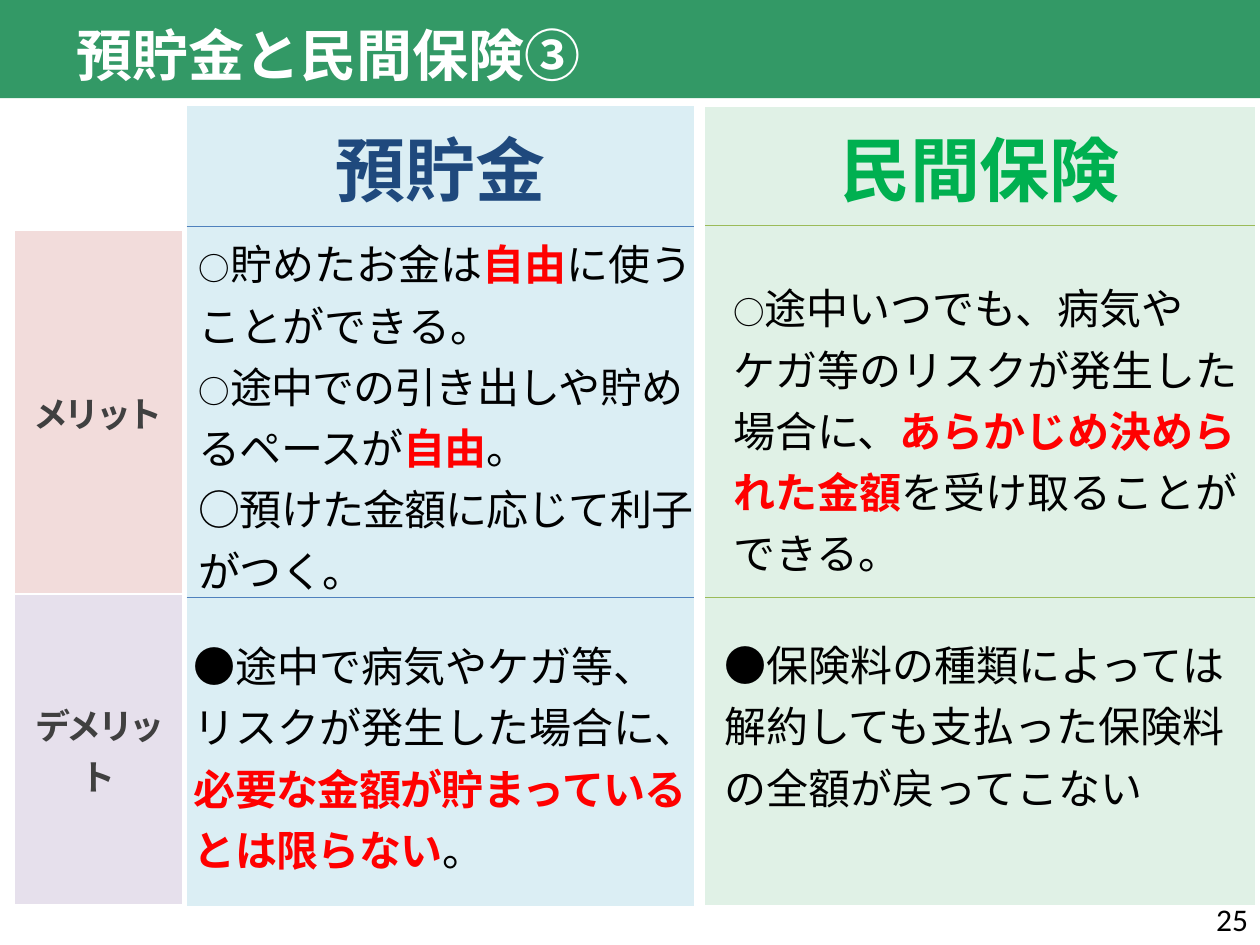
from lxml import etree
from pptx import Presentation
from pptx.dml.color import RGBColor
from pptx.enum.shapes import MSO_SHAPE
from pptx.enum.text import MSO_ANCHOR, PP_ALIGN
from pptx.oxml.ns import qn
from pptx.util import Cm, Pt

RECT = MSO_SHAPE.RECTANGLE
TOP, MIDDLE = MSO_ANCHOR.TOP, MSO_ANCHOR.MIDDLE
LEFT, CENTER, RIGHT = PP_ALIGN.LEFT, PP_ALIGN.CENTER, PP_ALIGN.RIGHT
JP_FONT = "Noto Sans CJK JP"
PLAIN_TABLE_STYLE = "{2D5ABB26-0587-4C30-8999-92F81FD0307C}"

COLORS = {
    "header": "339966", "white": "FFFFFF", "black": "000000", "red": "FF0000",
    "deposit_fill": "DBEEF4", "deposit_line": "4F81BD", "deposit_title": "1F497D",
    "insurance_fill": "E0F1E6", "insurance_line": "9BBB59", "insurance_title": "00B050",
    "merit_fill": "F2DCDB", "demerit_fill": "E6E0EC", "label": "404040",
}

# Run formats
BODY = {"size": 24, "color": "black"}
MARK = {**BODY, "size": 18}
KEY = {**BODY, "color": "red", "bold": True}
TIGHT, TIGHT_KEY = {**BODY, "spacing": -50}, {**KEY, "spacing": -50}
CLOSE, CLOSE_KEY = {**BODY, "spacing": -40}, {**KEY, "spacing": -40}

DEPOSIT = {
    "name": "deposit", "title": "預貯金", "rows": (2.44, 7.47, 6.22),
    "notes": [
        ((0, 2.34, 10.59, 7.62), [
            [("○", MARK), ("貯めたお金は", BODY), ("自由", KEY), ("に使うことができる。", BODY)],
            [("○", MARK), ("途中での引き出しや貯めるペースが", TIGHT), ("自由", TIGHT_KEY),
             ("。", TIGHT)],
            [("○預けた金額に応じて利子がつく。", TIGHT)],
        ]),
        ((-0.1, 10.44, 10.59, 5.13), [
            [("●途中で病気やケガ等、リスクが発生した場合に、", BODY),
             ("必要な金額が貯まっているとは限らない", CLOSE_KEY), ("。", CLOSE)],
        ]),
    ],
}
INSURANCE = {
    "name": "insurance", "title": "民間保険", "rows": (2.39, 7.49, 6.2),
    "notes": [
        ((0.31, 3.2, 11.1, 5.11), [
            [("○", MARK), ("途中いつでも、病気や　ケガ等のリスクが発生した場合に、", BODY),
             ("あらかじめ決められた金額", KEY), ("を受け取ることができる。", BODY)],
        ]),
        ((0.13, 10.39, 11.1, 3.86), [
            [("●保険料の種類によっては解約しても支払った保険料の全額が戻ってこない", BODY)],
        ]),
    ],
}


def rgb(name):
    return RGBColor.from_string(COLORS[name])


def write_runs(paragraph, runs, align):
    paragraph.alignment = align
    for text, style in runs:
        run = paragraph.add_run()
        run.text = text
        font_name = style.get("font", JP_FONT)
        values = {"size": Pt(style["size"]), "bold": style.get("bold", False), "name": font_name}
        for attribute, value in values.items():
            setattr(run.font, attribute, value)
        run.font.color.rgb = rgb(style["color"])
        properties = run.font._element
        etree.SubElement(properties, qn("a:ea"), typeface=font_name)
        if "spacing" in style:
            properties.set("spc", str(style["spacing"]))


def add_text(slide, box, paragraphs, anchor=TOP, align=LEFT, line_spacing=None):
    frame = slide.shapes.add_textbox(*map(Cm, box)).text_frame
    frame.word_wrap = True
    frame.vertical_anchor = anchor
    for index, runs in enumerate(paragraphs):
        paragraph = frame.paragraphs[0] if index == 0 else frame.add_paragraph()
        paragraph.line_spacing = line_spacing
        write_runs(paragraph, runs, align)


def add_border(cell, sides, color):
    """Draw 1 pt borders; sides are given in schema order L, R, T, B."""
    properties = cell._tc.get_or_add_tcPr()
    for index, side in enumerate(sides):
        line = etree.Element(qn(f"a:ln{side}"), w=str(Pt(1)))
        fill = etree.SubElement(line, qn("a:solidFill"))
        etree.SubElement(fill, qn("a:srgbClr"), val=COLORS[color])
        properties.insert(index, line)


def add_panel(slide, left, top, width, rows, fills):
    """Add a one-column table and return its cells."""
    frame = slide.shapes.add_table(len(rows), 1, *map(Cm, (left, top, width, sum(rows))))
    table = frame.table
    table.first_row = table.horz_banding = False
    table._tbl.tblPr.find(qn("a:tableStyleId")).text = PLAIN_TABLE_STYLE
    cells = [table.cell(index, 0) for index in range(len(rows))]
    for row, height, cell, fill in zip(table.rows, rows, cells, fills):
        row.height = Cm(height)
        cell.fill.solid()
        cell.fill.fore_color.rgb = rgb(fill)
        cell.vertical_anchor = MIDDLE
    return cells


def add_header(slide, left, top, width, height):
    bar = slide.shapes.add_shape(RECT, *map(Cm, (left, top, width, height)))
    bar.shadow.inherit = False
    bar.fill.solid()
    bar.fill.fore_color.rgb = rgb("header")
    bar.line.fill.background()
    title = ("預貯金と民間保険③", {"size": 32, "color": "white", "bold": True})
    add_text(slide, (left + 1.3, top + 0.08, 19.43, 2.01), [[title]], MIDDLE)


def add_row_labels(slide, left, top, width):
    cells = add_panel(slide, left, top, width, (7.32, 6.27), ("merit_fill", "demerit_fill"))
    style = {"size": 20, "color": "label", "bold": True, "spacing": -210}
    for cell, label in zip(cells, ("メリット", "デメリット")):
        write_runs(cell.text_frame.paragraphs[0], [(label, style)], CENTER)
        add_border(cell, "LRTB", "white")


def add_option(slide, left, top, width, option):
    name = option["name"]
    cells = add_panel(slide, left, top, width, option["rows"], [f"{name}_fill"] * 3)
    style = {"size": 40, "color": f"{name}_title", "bold": True}
    write_runs(cells[0].text_frame.paragraphs[0], [(option["title"], style)], CENTER)
    for cell, sides in zip(cells, ("B", "TB", "T")):
        add_border(cell, sides, f"{name}_line")
    # Merits and demerits lie over the table rows
    for (dx, dy, note_width, note_height), paragraphs in option["notes"]:
        box = (left + dx, top + dy, note_width, note_height)
        add_text(slide, box, paragraphs, line_spacing=Pt(35))


def add_page_number(slide, left, top, width, height):
    number = ("25", {"size": 18, "color": "black", "font": "Calibri"})
    add_text(slide, (left, top, width, height), [[number]], MIDDLE, RIGHT)


def main():
    presentation = Presentation()
    presentation.slide_width, presentation.slide_height = Cm(25.4), Cm(19.05)
    slide = presentation.slides.add_slide(presentation.slide_layouts[6])
    add_header(slide, 0, 0, 25.4, 1.98)
    add_option(slide, 3.76, 2.13, 10.24, DEPOSIT)
    add_option(slide, 14.22, 2.16, 11.07, INSURANCE)
    add_row_labels(slide, 0.28, 4.65, 3.4)
    add_page_number(slide, 19.69, 18.01, 5.72, 1.02)
    presentation.save("out.pptx")


if __name__ == "__main__":
    main()
